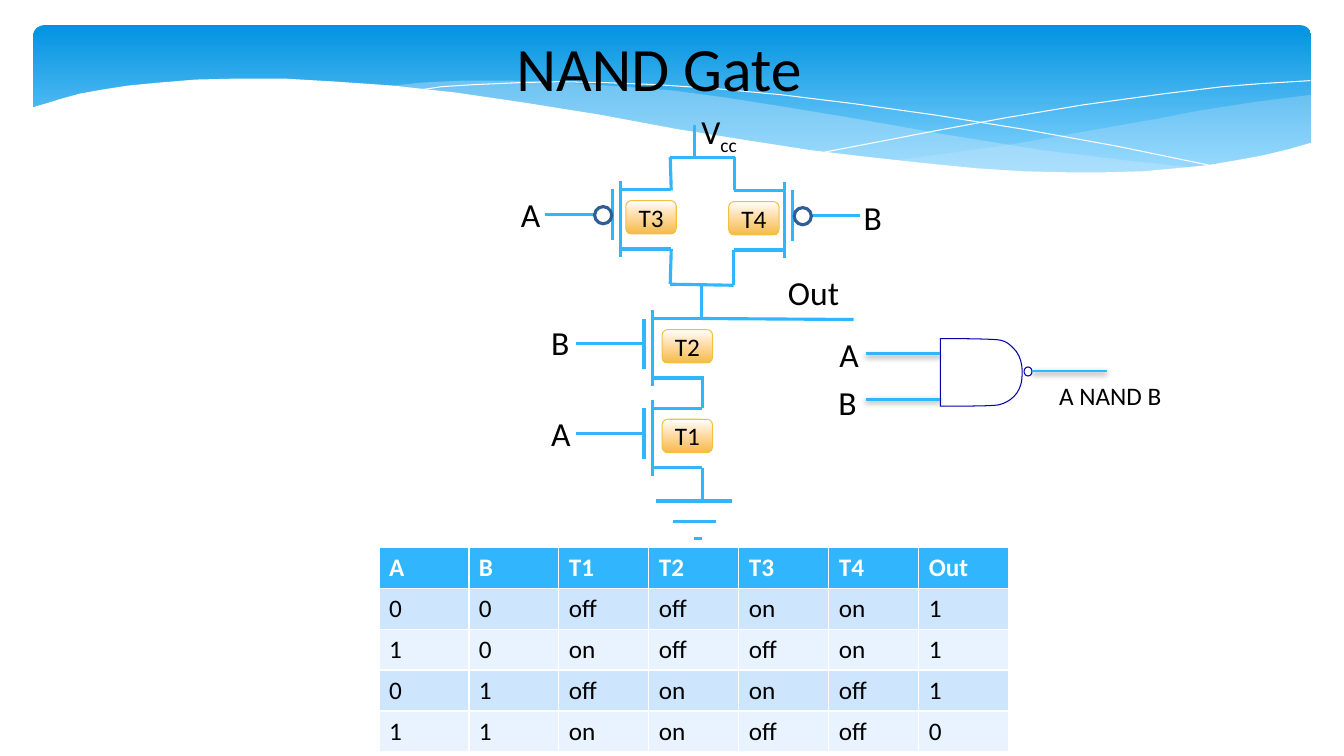
from dataclasses import dataclass
from itertools import pairwise

from lxml import etree
from pptx import Presentation
from pptx import util as u
from pptx.dml.color import RGBColor
from pptx.enum import shapes, text
from pptx.oxml.ns import qn

FONT, BLACK, WHITE, WIRE, NAVY = "Calibri", "000000", "FFFFFF", "31B6FD", "0000A9"
Point = tuple[float, float]


@dataclass
class Wave:
    points: list[Point]
    fill: str | None = None
    opacity: int = 100
    line: str | None = None


@dataclass
class Transistor:
    name: str
    channel: float
    top: float
    side: int = 1  # 1: gate on the left, -1: gate on the right
    inverted: bool = False


@dataclass
class Label:
    words: str
    left: float
    top: float
    width: float
    size: int = 24
    subscript: str = ""


WAVES = [
    Wave([(13.01, 0.94), (12.46, 1.01), (11.88, 1.1), (11.47, 1.18), (10.73, 1.31),
          (10.05, 1.43), (9.41, 1.52), (8.82, 1.6), (9.4, 1.65), (9.93, 1.69), (10.41, 1.72),
          (10.99, 1.72), (11.51, 1.7), (11.96, 1.65), (12.38, 1.58), (12.66, 1.52), (13.01, 1.42)],
         "C6E7FC", 29),
    Wave([(11.9, 1.67), (11.16, 1.59), (10.34, 1.49), (9.41, 1.34), (8.39, 1.16), (7.78, 1.06),
          (7.21, 0.97), (6.69, 0.9), (6.19, 0.86), (5.6, 0.82), (5.06, 0.8), (4.59, 0.8),
          (4.18, 0.82), (3.82, 0.86), (4.31, 0.9), (4.83, 0.97), (5.39, 1.06), (5.99, 1.16),
          (7.06, 1.35), (8.02, 1.5), (8.87, 1.61), (9.63, 1.68), (10.3, 1.72), (10.9, 1.73),
          (11.43, 1.71)], "C6E7FC", 40),
    Wave([(4.12, 0.9), (4.38, 0.86), (4.7, 0.84), (5.16, 0.82), (5.55, 0.81), (6, 0.82),
          (6.52, 0.84), (7.1, 0.88), (7.75, 0.94), (8.48, 1.03), (9.27, 1.14), (10.14, 1.28),
          (11.08, 1.45), (12.1, 1.66)], line=WHITE),
    Wave([(8.18, 1.51), (8.7, 1.41), (9.27, 1.3), (9.97, 1.17), (10.75, 1.04), (11.55, 0.93),
          (12.13, 0.86), (12.5, 0.83), (13, 0.8)], line=WHITE),
    Wave([(13.03, 1.41), (12.79, 1.48), (12.54, 1.54), (12.27, 1.59), (11.98, 1.64),
          (11.67, 1.67), (11.34, 1.7), (10.97, 1.71), (10.58, 1.71), (10.15, 1.7), (9.69, 1.67),
          (9.18, 1.62), (8.63, 1.56), (8.04, 1.49), (7.4, 1.39), (6.71, 1.28), (5.96, 1.14),
          (5.21, 1.02), (4.53, 0.92), (3.9, 0.85), (3.33, 0.81), (2.82, 0.78), (2.35, 0.78),
          (1.94, 0.79), (1.58, 0.82), (1.27, 0.85), (1.01, 0.89), (0.79, 0.93), (0.61, 0.98),
          (0.48, 1.02), (0.31, 1.07), (0.31, 2.24), (13.03, 2.24)], WHITE),
]
TRANSISTORS = [
    Transistor("T3", 6.16, 1.8, inverted=True),
    Transistor("T4", 7.78, 1.81, -1, inverted=True),
    Transistor("T2", 6.47, 3.08),
    Transistor("T1", 6.47, 3.97),
]
WIRES = [
    [(6.89, 1.24), (6.89, 1.56)],
    [(6.66, 1.89), (6.65, 1.56), (7.29, 1.56), (7.29, 1.89)],
    [(6.66, 2.47), (6.65, 2.82), (7.28, 2.83), (7.28, 2.48)],
    [(6.96, 2.83), (6.96, 3.16), (8.47, 3.17)],
    [(6.97, 3.73), (6.97, 4.05)],
    [(6.97, 4.64), (6.97, 4.96)],
    [(6.51, 4.97), (7.26, 4.97)],
    [(6.68, 5.17), (7.1, 5.17)],
    [(6.89, 5.34), (6.97, 5.34)],
]
LABELS = [
    Label("V", 6.86, 1.05, 0.58, subscript="cc"),
    Label("A", 5.07, 1.87, 0.41), Label("B", 8.47, 1.9, 0.4),
    Label("B", 5.37, 3.14, 0.41), Label("A", 5.37, 4.05, 0.41),
    Label("Out", 7.72, 2.65, 0.74),
    Label("A", 8.23, 3.26, 0.41), Label("B", 8.22, 3.74, 0.41),
    Label("A NAND B", 10.41, 3.72, 1.27, 18),
]
GATE_CURVES = [
    [(9.33, 3.36), (9.52, 3.36), (9.7, 3.36), (9.89, 3.37)],
    [(9.89, 3.37), (9.97, 3.38), (10, 3.4), (10.05, 3.45)],
    [(10.05, 3.45), (10.13, 3.52), (10.15, 3.64), (10.14, 3.74)],
    [(10.14, 3.74), (10.14, 3.82), (10.1, 3.91), (10.03, 3.96)],
    [(10.03, 3.96), (9.99, 3.99), (9.95, 4.01), (9.89, 4.02)],
    [(9.89, 4.02), (9.78, 4.03), (9.55, 4.03), (9.33, 4.03)],
]
TRUTH_TABLE = ["A B T1 T2 T3 T4 Out", "0 0 off off on on 1", "1 0 on off off on 1",
               "0 1 off on on off 1", "1 1 on on off off 0"]


def length(inches: float) -> u.Length:
    return u.Cm(inches * 2.54)


def color(value: str) -> RGBColor:
    return RGBColor.from_string(value)


def paint(shape, fill: str | None, line: str | None, width: float = 0) -> None:
    shape.shadow.inherit = False
    if fill:
        shape.fill.solid()
        shape.fill.fore_color.rgb = color(fill)
    else:
        shape.fill.background()
    if line:
        shape.line.color.rgb = color(line)
        shape.line.width = u.Pt(width)
    else:
        shape.line.fill.background()


def paint_gradient(shape, stops: list[tuple[int, str]]) -> None:
    """Fill from top to bottom with stops of (percent, colour)."""
    shape.fill.gradient()
    shape.fill.gradient_angle = 270
    stop_list = shape._element.spPr.find(".//" + qn("a:gsLst"))
    stop_list.clear()
    for percent, value in stops:
        stop = etree.SubElement(stop_list, qn("a:gs"), pos=str(percent * 1000))
        etree.SubElement(stop, qn("a:srgbClr"), val=value)


def add_preset(page, kind, left: float, top: float, width: float, height: float):
    return page.shapes.add_shape(kind, *map(length, (left, top, width, height)))


def add_outline(page, points: list[Point], closed: bool):
    start, *rest = [(length(x), length(y)) for x, y in points]
    builder = page.shapes.build_freeform(*start)
    builder.add_line_segments(rest, close=closed)
    return builder.convert_to_shape()


def add_wire(page, start: Point, end: Point, width: float = 2.25, shadow: bool = False) -> None:
    wire = page.shapes.add_connector(shapes.MSO_CONNECTOR.STRAIGHT, *map(length, start + end))
    wire.line.color.rgb = color(WIRE)
    wire.line.width = u.Pt(width)
    effects = etree.SubElement(wire._element.spPr, qn("a:effectLst"))
    if shadow:
        outer = etree.SubElement(effects, qn("a:outerShdw"), blurRad=str(u.Pt(4)),
                                 dist=str(u.Pt(2)), dir="5400000", rotWithShape="0")
        black = etree.SubElement(outer, qn("a:srgbClr"), val=BLACK)
        etree.SubElement(black, qn("a:alpha"), val="38000")


def set_font(para, size: int, value: str = BLACK, bold: bool = False) -> None:
    para.font.name, para.font.size, para.font.bold = FONT, u.Pt(size), bold
    para.font.color.rgb = color(value)


def add_label(page, label: Label, height: float, wrap: bool = False):
    box = page.shapes.add_textbox(*map(length, (label.left, label.top, label.width, height)))
    box.text_frame.word_wrap = wrap
    box.text_frame.auto_size = text.MSO_AUTO_SIZE.SHAPE_TO_FIT_TEXT
    para = box.text_frame.paragraphs[0]
    para.add_run().text = label.words
    if label.subscript:
        span = para.add_run()
        span.text = label.subscript
        span.font._element.set("baseline", "-25000")
    set_font(para, label.size)
    return para


def add_header(page) -> None:
    banner = add_preset(page, shapes.MSO_SHAPE.ROUNDED_RECTANGLE, 0.33, 0.25, 12.68, 1.56)
    banner.adjustments[0] = 0.07
    paint(banner, None, None)
    paint_gradient(banner, [(0, "0293E0"), (90, "83D3FE")])
    for wave in WAVES:
        outline = add_outline(page, wave.points, closed=wave.fill is not None)
        paint(outline, wave.fill, wave.line)
        if wave.opacity < 100:
            tint = outline._element.spPr.find(qn("a:solidFill"))[0]
            etree.SubElement(tint, qn("a:alpha"), val=str(wave.opacity * 1000))
    title = add_label(page, Label("NAND Gate", 1.83, 0.25, 9.42, 44), 0.84, wrap=True)
    title.alignment = text.PP_ALIGN.CENTER


def add_transistor(page, part: Transistor) -> None:
    x, top, side = part.channel, part.top, part.side
    gate, middle = x - 0.08 * side, top + 0.33
    add_wire(page, (gate, top + 0.08), (gate, top + 0.58))
    add_wire(page, (x, top), (x, top + 0.75))
    for lead in (top + 0.08, top + 0.67):
        add_wire(page, (x, lead), (x + 0.5 * side, lead))
    add_wire(page, (gate - 0.67 * side, middle), (gate, middle))
    if part.inverted:
        center = gate - 0.1 * side
        bubble = add_preset(page, shapes.MSO_SHAPE.OVAL, center - 0.08, middle - 0.08, 0.17, 0.17)
        paint(bubble, WHITE, "315D95", 2.25)
    badge_middle = x + (0.3 if part.inverted else 0.35) * side
    badge = add_preset(page, shapes.MSO_SHAPE.ROUNDED_RECTANGLE,
                       badge_middle - 0.25, top + 0.19, 0.5, 0.33)
    paint(badge, None, "F5C040", 0.75)
    paint_gradient(badge, [(0, WHITE), (44, "FFDDAA"), (100, "F4BB4A")])
    badge.text_frame.vertical_anchor = text.MSO_ANCHOR.MIDDLE
    para = badge.text_frame.paragraphs[0]
    para.text, para.alignment = part.name, text.PP_ALIGN.CENTER
    set_font(para, 18)


def curve_points(a: Point, b: Point, c: Point, d: Point, steps: int = 6) -> list[Point]:
    """Sample a cubic Bezier curve."""
    return [tuple((1 - t) ** 3 * p + 3 * t * (1 - t) ** 2 * q + 3 * t * t * (1 - t) * r + t ** 3 * s
                  for p, q, r, s in zip(a, b, c, d))
            for t in (step / steps for step in range(steps + 1))]


def add_gate_symbol(page) -> None:
    points = [point for curve in GATE_CURVES for point in curve_points(*curve)]
    paint(add_outline(page, points, closed=True), None, NAVY)
    paint(add_preset(page, shapes.MSO_SHAPE.OVAL, 10.16, 3.64, 0.08, 0.09), None, NAVY)
    for x, y in [(8.59, 3.51), (8.59, 3.96), (10.24, 3.68)]:
        add_wire(page, (x, y), (x + 0.74, y), 2, shadow=True)


def add_truth_table(page) -> None:
    rows = [line.split() for line in TRUTH_TABLE]
    table = page.shapes.add_table(len(rows), len(rows[0]),
                                  *map(length, (3.76, 5.43, 6.25, 2.03))).table
    for i, row in enumerate(rows):
        fill = WIRE if i == 0 else ("E8F3FF", "CEE5FE")[i % 2]
        for j, value in enumerate(row):
            cell = table.cell(i, j)
            cell.text = value
            cell.fill.solid()
            cell.fill.fore_color.rgb = color(fill)
            set_font(cell.text_frame.paragraphs[0], 18, BLACK if i else WHITE, bold=i == 0)


def main() -> None:
    deck = Presentation()
    deck.slide_width, deck.slide_height = u.Cm(33.87), u.Cm(19.05)
    page = deck.slides.add_slide(deck.slide_layouts[6])
    add_header(page)
    for chain in WIRES:
        for start, end in pairwise(chain):
            add_wire(page, start, end)
    for part in TRANSISTORS:
        add_transistor(page, part)
    add_truth_table(page)
    add_gate_symbol(page)
    for label in LABELS:
        add_label(page, label, 0.5 if label.size == 24 else 0.4)
    deck.save("out.pptx")


if __name__ == "__main__":
    main()
